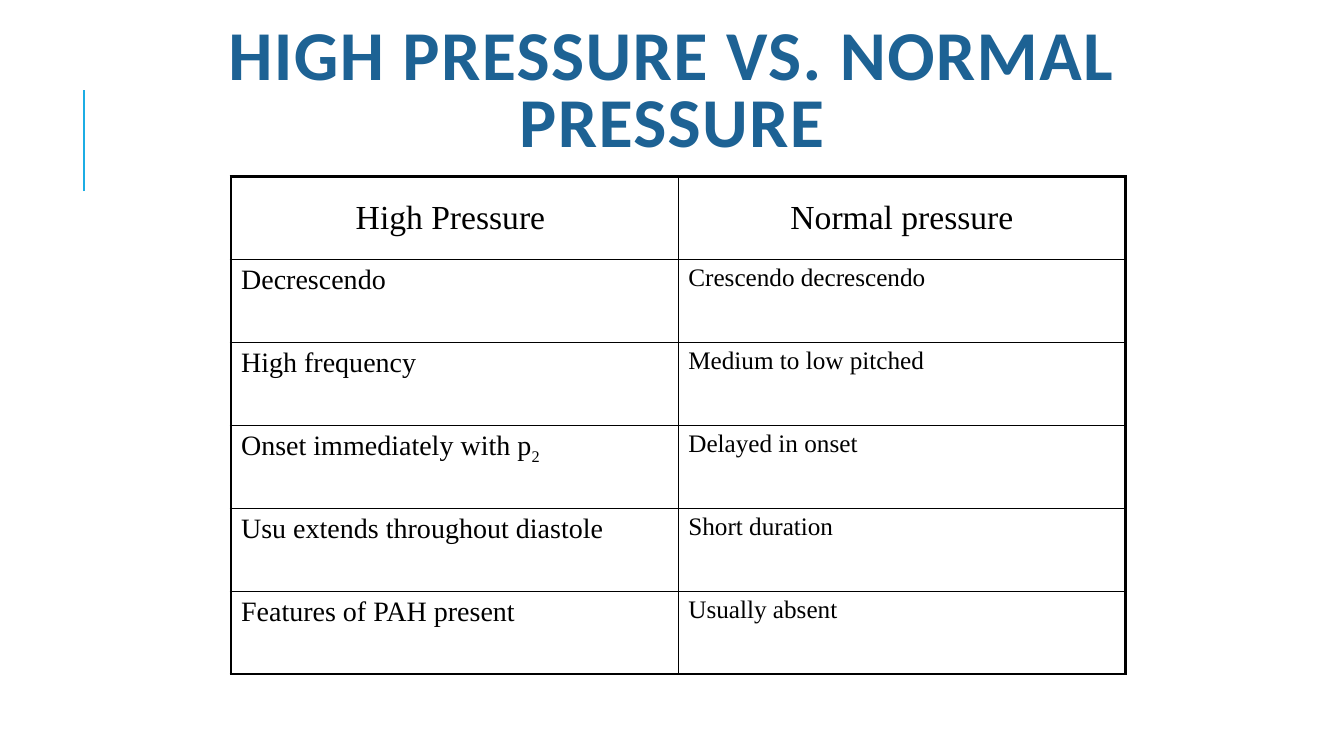
from dataclasses import dataclass

from lxml.etree import SubElement
from pptx import Presentation
from pptx.dml.color import RGBColor
from pptx.enum.shapes import MSO_CONNECTOR as Link
from pptx.enum.text import MSO_ANCHOR as Anchor, PP_ALIGN as Align
from pptx.oxml.ns import qn
from pptx.util import Pt

PX = 9525  # EMU, 96 px to the inch
BLACK = RGBColor(0x00, 0x00, 0x00)
BLUE = RGBColor(0x1D, 0x62, 0x94)
CYAN = RGBColor(0x1C, 0xAD, 0xE4)
SERIF = "Times New Roman"
THIN, THICK = 1, 2.25
COL_W, ROW_H = 426, 79


@dataclass(frozen=True)
class Row:
    high: str
    normal: str
    sub: str = ""


HEAD = Row("High Pressure ", "Normal pressure")
ROWS = [
    Row("Decrescendo", "Crescendo decrescendo"),
    Row("High frequency", "Medium to low pitched"),
    Row("Onset immediately with p", "Delayed in onset", sub="2"),
    Row("Usu extends throughout diastole", "Short duration"),
    Row("Features of PAH present", "Usually absent"),
]


def px(*sizes: int) -> list[int]:
    return [size * PX for size in sizes]


def write(para, text: str, size: float, font: str = SERIF,
          color: RGBColor = BLACK, bold: bool = False, **attrs: str) -> None:
    """Add a run; attrs are extra run properties, such as spc or baseline."""
    run = para.add_run()
    run.text = text
    run.font.size = Pt(size)
    run.font.name = font
    run.font.bold = bold
    run.font.color.rgb = color
    for name, value in attrs.items():
        run._r.get_or_add_rPr().set(name, value)


def add_border(cell, side: str, width: float) -> None:
    line = SubElement(cell._tc.get_or_add_tcPr(), qn(f"a:ln{side}"),
                      w=str(Pt(width)))
    fill = SubElement(line, qn("a:solidFill"))
    SubElement(fill, qn("a:srgbClr"), val=str(BLACK))


def add_accent(slide) -> None:
    line = slide.shapes.add_connector(Link.STRAIGHT, *px(80, 182, 80, 86))
    line.line.color.rgb = CYAN
    line.line.width = Pt(1.5)
    SubElement(line._element.spPr, qn("a:effectLst"))


def add_title(slide) -> None:
    frame = slide.shapes.add_textbox(*px(64, 29, 1152, 120)).text_frame
    frame.word_wrap = True
    frame.vertical_anchor = Anchor.MIDDLE
    para = frame.paragraphs[0]
    para.alignment = Align.CENTER
    para.line_spacing = 0.8
    write(para, "HIGH PRESSURE VS. NORMAL PRESSURE", 50, "Calibri", BLUE,
          bold=True, spc="100")


def add_grid(slide) -> None:
    rows = [HEAD, *ROWS]
    last = len(rows) - 1
    table = slide.shapes.add_table(
        len(rows), 2, *px(220, 168, 2 * COL_W, len(rows) * ROW_H)).table
    table.first_row = table.horz_banding = False
    for i, row in enumerate(rows):
        for j, text in enumerate((row.high, row.normal)):
            cell = table.cell(i, j)
            para = cell.text_frame.paragraphs[0]
            if row is HEAD:
                cell.vertical_anchor = Anchor.MIDDLE
                para.alignment = Align.CENTER
                size = 24
            else:
                size = (20, 18)[j]
            write(para, text, size)
            if row.sub and j == 0:
                write(para, row.sub, size, baseline="-25000")
            edges = {"L": j == 0, "R": j == 1, "T": i == 0, "B": i == last}
            for side, outer in edges.items():
                add_border(cell, side, THICK if outer else THIN)
            cell.fill.background()


def main() -> None:
    deck = Presentation()
    deck.slide_width, deck.slide_height = px(1280, 720)
    slide = deck.slides.add_slide(deck.slide_layouts[6])
    add_accent(slide)
    add_title(slide)
    add_grid(slide)
    deck.save("out.pptx")


if __name__ == "__main__":
    main()
